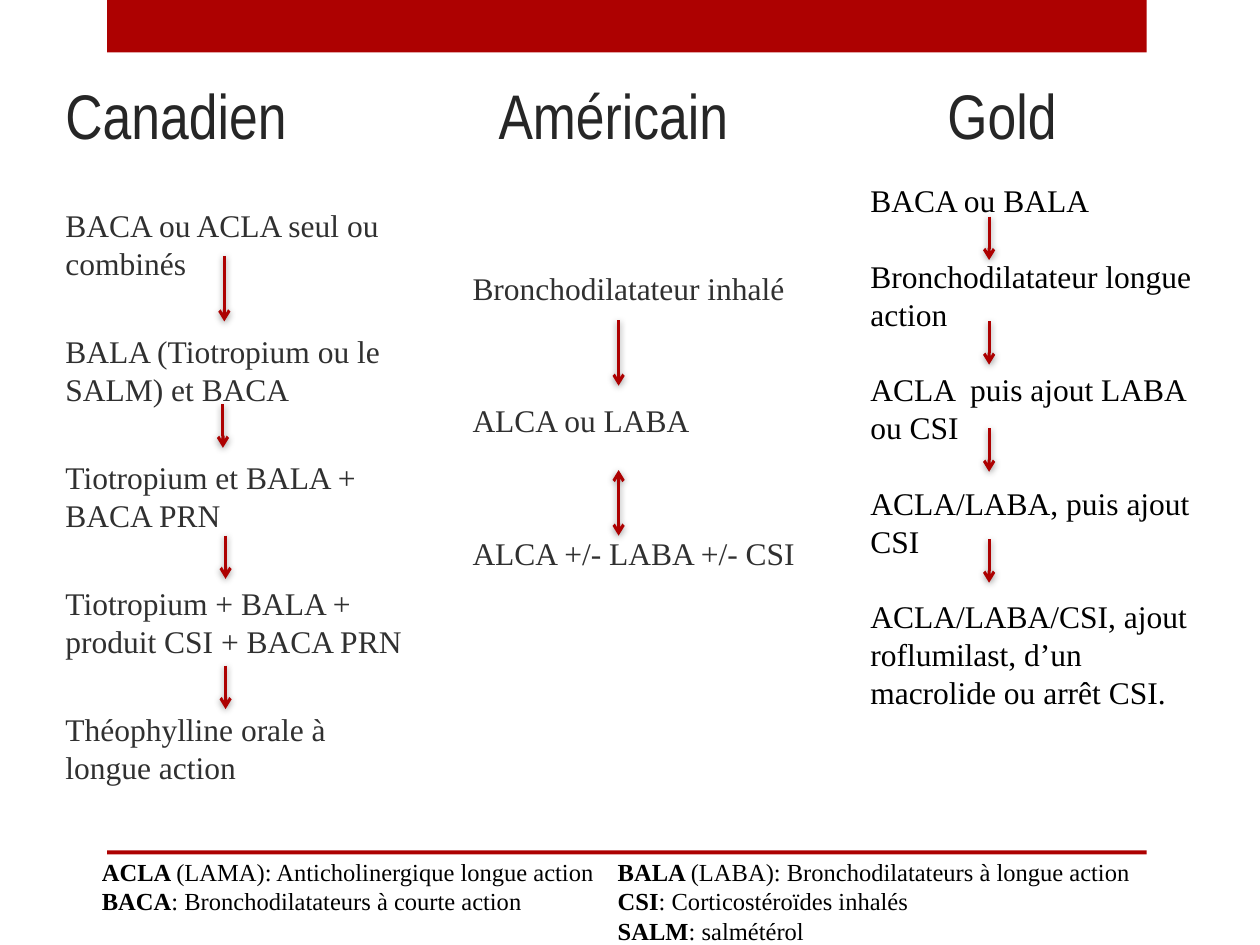
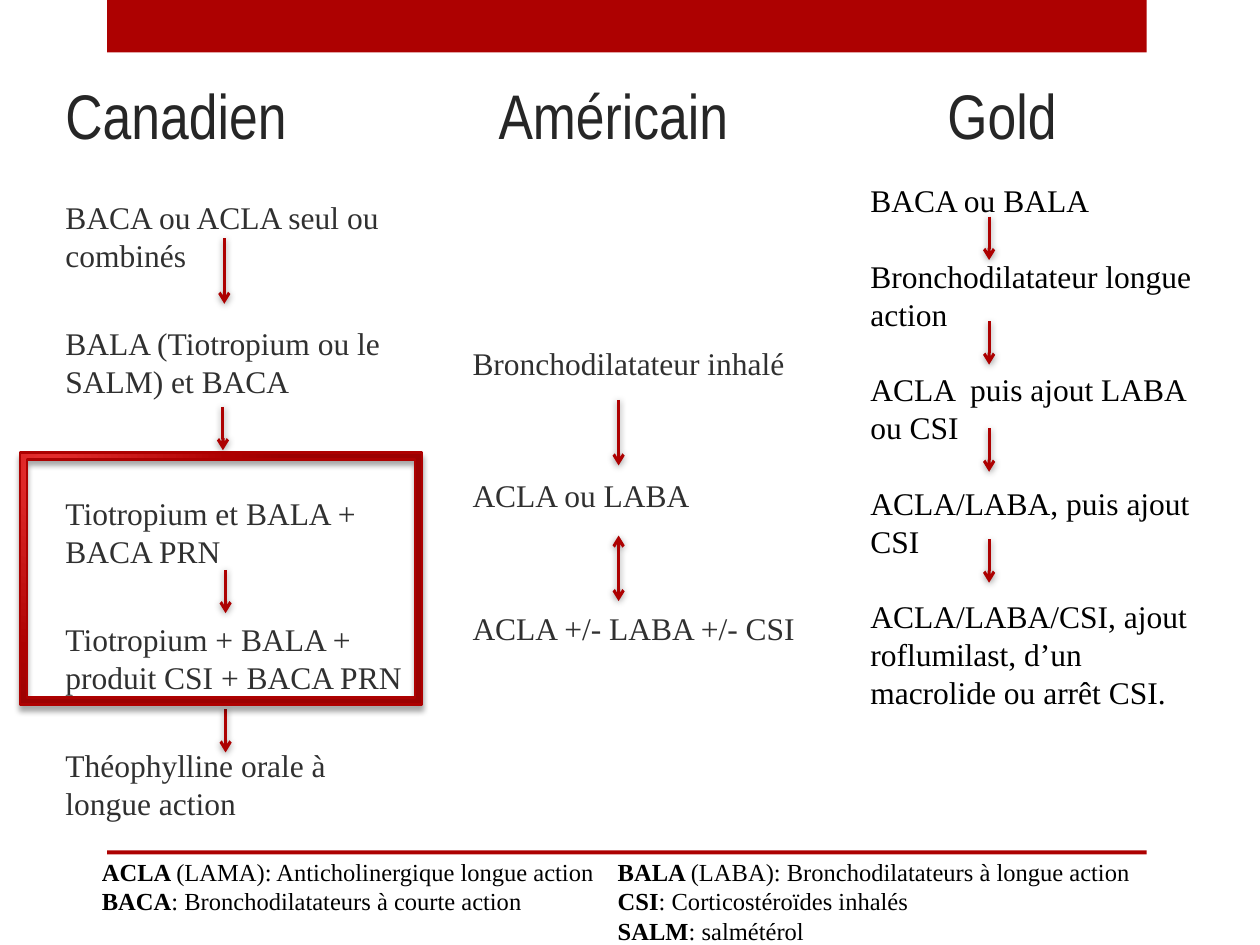
"""Build two slides comparing Canadian, American and Gold treatment ladders."""
from dataclasses import dataclass

from lxml import etree
from pptx import Presentation
from pptx.dml.color import RGBColor
from pptx.enum.shapes import MSO_CONNECTOR, MSO_SHAPE
from pptx.enum.text import MSO_ANCHOR, MSO_AUTO_SIZE, PP_ALIGN
from pptx.oxml.ns import qn
from pptx.util import Pt

RECTANGLE = MSO_SHAPE.RECTANGLE
FRAME = MSO_SHAPE.FRAME
STRAIGHT = MSO_CONNECTOR.STRAIGHT
TOP, MIDDLE, BOTTOM = MSO_ANCHOR.TOP, MSO_ANCHOR.MIDDLE, MSO_ANCHOR.BOTTOM
LEFT = PP_ALIGN.LEFT
FIXED_SIZE = MSO_AUTO_SIZE.NONE
TWO_CONTENT = 3


@dataclass(frozen=True)
class Theme:
    red: str = "AD0101"
    light_red: str = "E62F2F"
    dark_red: str = "9C0101"
    title_ink: str = "262626"
    body_ink: str = "303030"
    black: str = "000000"
    title_font: str = "Arial Narrow"
    body_font: str = "Times New Roman"
    title_size: float = 36
    body_size: float = 18
    legend_size: float = 14
    line_factor: float = 1.2
    arrow_width: float = 1.75
    frame_width: float = 1.5


LONG, SHORT = 37.5, 24.8
STEP_GAP, WIDE_GAP, GOLD_GAP = 28.8, 54, 21.6
CANADIAN_TAIL = 38
AMERICAN_X, GOLD_X = 353.5, 565.2

HEADINGS = ("Canadien", "Américain", "Gold")
HEADING_TABS = (247.5, 504)
CANADIAN_STEPS = (
    "BACA ou ACLA seul ou combinés",
    "BALA (Tiotropium ou le SALM) et BACA",
    "Tiotropium et BALA + BACA PRN",
    "Tiotropium + BALA + produit CSI + BACA PRN",
    "Théophylline orale à longue action",
)
GOLD_STEPS = (
    "BACA ou BALA",
    "Bronchodilatateur longue action",
    "ACLA  puis ajout LABA ou CSI",
    "ACLA/LABA, puis ajout CSI",
    "ACLA/LABA/CSI, ajout roflumilast, d’un macrolide ou arrêt CSI.",
)
GOLD_ARROW_TOPS = (123.8, 183.6, 244.8, 308.2)
LEGENDS = (
    (51.1, (("ACLA ", "(LAMA): Anticholinergique longue action"),
            ("BACA", ": Bronchodilatateurs à courte action"))),
    (345.9, (("BALA ", "(LABA): Bronchodilatateurs à longue action"),
             ("CSI", ": Corticostéroïdes inhalés"),
             ("SALM", ": salmétérol"))),
)
VARIANTS = (
    dict(
        american_steps=("Bronchodilatateur inhalé", "ALCA ou LABA", "ALCA +/- LABA +/- CSI"),
        canadian_top=100.1, wide_step=None, american_height=280.1,
        canadian_arrows=((128.2, 146.2, LONG), (127.4, 231.1, SHORT),
                         (128.9, 306, SHORT), (128.9, 380.4, SHORT)),
        american_tops=(182.9, 268.6), highlight=None,
    ),
    dict(
        american_steps=("Bronchodilatateur inhalé", "ACLA ou LABA", "ACLA +/- LABA +/- CSI"),
        canadian_top=108, wide_step=2, american_height=365.8,
        canadian_arrows=((128.2, 136.1, LONG), (127.4, 232.5, SHORT),
                         (128.9, 325.6, SHORT), (128.9, 405.2, SHORT)),
        american_tops=(228.5, 306), highlight=(11.5, 258.5, 229.7, 144),
    ),
)


def add_span(para, text, font, size, color, bold=False):
    span = para.add_run()
    span.text = text
    span.font.name = font
    span.font.size = Pt(size)
    span.font.bold = bold
    span.font.color.rgb = RGBColor.from_string(color)


def add_node(parent, tag, **attributes):
    values = {name: str(value) for name, value in attributes.items()}
    return etree.SubElement(parent, qn(tag), values)


def add_color(parent, color, alpha=None):
    node = add_node(parent, "a:srgbClr", val=color)
    if alpha:
        add_node(node, "a:alpha", val=alpha * 1000)


def add_shadow(shape, alpha, blur, distance, angle):
    effects = add_node(shape._element.spPr, "a:effectLst")
    shadow = add_node(effects, "a:outerShdw", blurRad=Pt(blur), dist=Pt(distance),
                      dir=angle * 60000, rotWithShape=0)
    add_color(shadow, Theme.black, alpha)


def place(shape, left, top, width, height):
    shape.left, shape.top = Pt(left), Pt(top)
    shape.width, shape.height = Pt(width), Pt(height)


class DeckBuilder:
    """Hold the theme and current slide, and draw each kind of element."""

    def __init__(self, theme):
        self.theme = theme
        self.deck = Presentation()
        self.deck.slide_width, self.deck.slide_height = Pt(720), Pt(540)
        self.page = None

    def new_page(self):
        self.page = self.deck.slides.add_slide(self.deck.slide_layouts[TWO_CONTENT])
        self.band(0, 30)
        self.band(486, 2.2)

    def band(self, top, height):
        band = self.page.shapes.add_shape(RECTANGLE, Pt(61.2), Pt(top), Pt(594), Pt(height))
        band.shadow.inherit = False
        band.fill.solid()
        band.fill.fore_color.rgb = RGBColor.from_string(self.theme.red)
        band.line.fill.background()

    def frame_text(self, box, anchor):
        frame = box.text_frame
        frame.word_wrap = True
        frame.auto_size = FIXED_SIZE
        frame.vertical_anchor = anchor
        return frame

    def title(self, headings):
        box = self.page.shapes.title
        place(box, 30.2, 27.4, 643.7, 63.4)
        para = self.frame_text(box, BOTTOM).paragraphs[0]
        para.alignment = LEFT
        tabs = add_node(para._p.get_or_add_pPr(), "a:tabLst")
        for position in HEADING_TABS:
            add_node(tabs, "a:tab", pos=Pt(position), algn="l")
        add_span(para, "\t".join(headings), self.theme.title_font,
                 self.theme.title_size, self.theme.title_ink)

    def paragraph(self, frame, index, size, gap=0):
        para = frame.add_paragraph() if index else frame.paragraphs[0]
        para.line_spacing = Pt(size * self.theme.line_factor)
        para.space_before = Pt(gap if index else 0)
        para.space_after = Pt(0)
        properties = para._p.get_or_add_pPr()
        properties.set("marL", "0")
        properties.set("indent", "0")
        add_node(properties, "a:buNone")
        return para

    def steps(self, box, lines, gap, color, anchor=MIDDLE, wide_step=None, tail=3.6):
        frame = self.frame_text(box, anchor)
        frame.margin_bottom = Pt(tail)
        for index, line in enumerate(lines):
            space = WIDE_GAP if index == wide_step else gap
            para = self.paragraph(frame, index, self.theme.body_size, space)
            add_span(para, line, self.theme.body_font, self.theme.body_size, color)

    def text_box(self, left, top, width, height):
        return self.page.shapes.add_textbox(Pt(left), Pt(top), Pt(width), Pt(height))

    def legend(self, left, entries):
        frame = self.frame_text(self.text_box(left, 486, 309.3, 54), TOP)
        frame.margin_right = frame.margin_bottom = 0
        theme = self.theme
        for index, entry in enumerate(entries):
            para = self.paragraph(frame, index, theme.legend_size)
            for text, bold in zip(entry, (True, False)):
                add_span(para, text, theme.body_font, theme.legend_size, theme.black, bold)

    def arrow(self, x, top, length, double=False):
        arrow = self.page.shapes.add_connector(STRAIGHT, Pt(x), Pt(top), Pt(x), Pt(top + length))
        arrow.line.color.rgb = RGBColor.from_string(self.theme.red)
        arrow.line.width = Pt(self.theme.arrow_width)
        line = arrow.line._get_or_add_ln()
        if double:
            add_node(line, "a:headEnd", type="arrow")
        add_node(line, "a:tailEnd", type="arrow")
        add_shadow(arrow, 40, 4, 1, 88)

    def highlight(self, left, top, width, height):
        frame = self.page.shapes.add_shape(FRAME, Pt(left), Pt(top), Pt(width), Pt(height))
        frame.adjustments[0] = 0.028
        frame.line.color.rgb = RGBColor.from_string(self.theme.red)
        frame.line.width = Pt(self.theme.frame_width)
        frame.fill.background()
        properties = frame._element.spPr
        gradient = etree.Element(qn("a:gradFill"), rotWithShape="1")
        stops = add_node(gradient, "a:gsLst")
        colors = (self.theme.light_red, self.theme.red, self.theme.dark_red)
        for position, color in zip((0, 76, 100), colors):
            add_color(add_node(stops, "a:gs", pos=position * 1000), color)
        circle = add_node(gradient, "a:path", path="circle")
        add_node(circle, "a:fillToRect", l=15000, t=15000, r=100000, b=100000)
        properties.replace(properties.find(qn("a:noFill")), gradient)
        add_shadow(frame, 35, 3, 3, 90)

    def comparison(self, american_steps, canadian_top, wide_step, american_height,
                   canadian_arrows, american_tops, highlight):
        self.new_page()
        self.title(HEADINGS)
        canadian, american = list(self.page.placeholders)[1:]
        place(canadian, 30.2, canadian_top, 210.2, 401)
        self.steps(canadian, CANADIAN_STEPS, STEP_GAP, self.theme.body_ink,
                   wide_step=wide_step, tail=CANADIAN_TAIL)
        place(american, 262.8, 100.1, 205.9, american_height)
        self.steps(american, american_steps, WIDE_GAP, self.theme.body_ink)
        gold = self.text_box(490.3, 100.1, 204.5, 312.5)
        self.steps(gold, GOLD_STEPS, GOLD_GAP, self.theme.black, anchor=TOP)
        for x, top, length in canadian_arrows:
            self.arrow(x, top, length)
        for top, double in zip(american_tops, (False, True)):
            self.arrow(AMERICAN_X, top, LONG, double)
        for top in GOLD_ARROW_TOPS:
            self.arrow(GOLD_X, top, SHORT)
        if highlight:
            self.highlight(*highlight)
        for left, entries in LEGENDS:
            self.legend(left, entries)


def main():
    builder = DeckBuilder(Theme())
    for variant in VARIANTS:
        builder.comparison(**variant)
    builder.deck.save("out.pptx")


if __name__ == "__main__":
    main()
